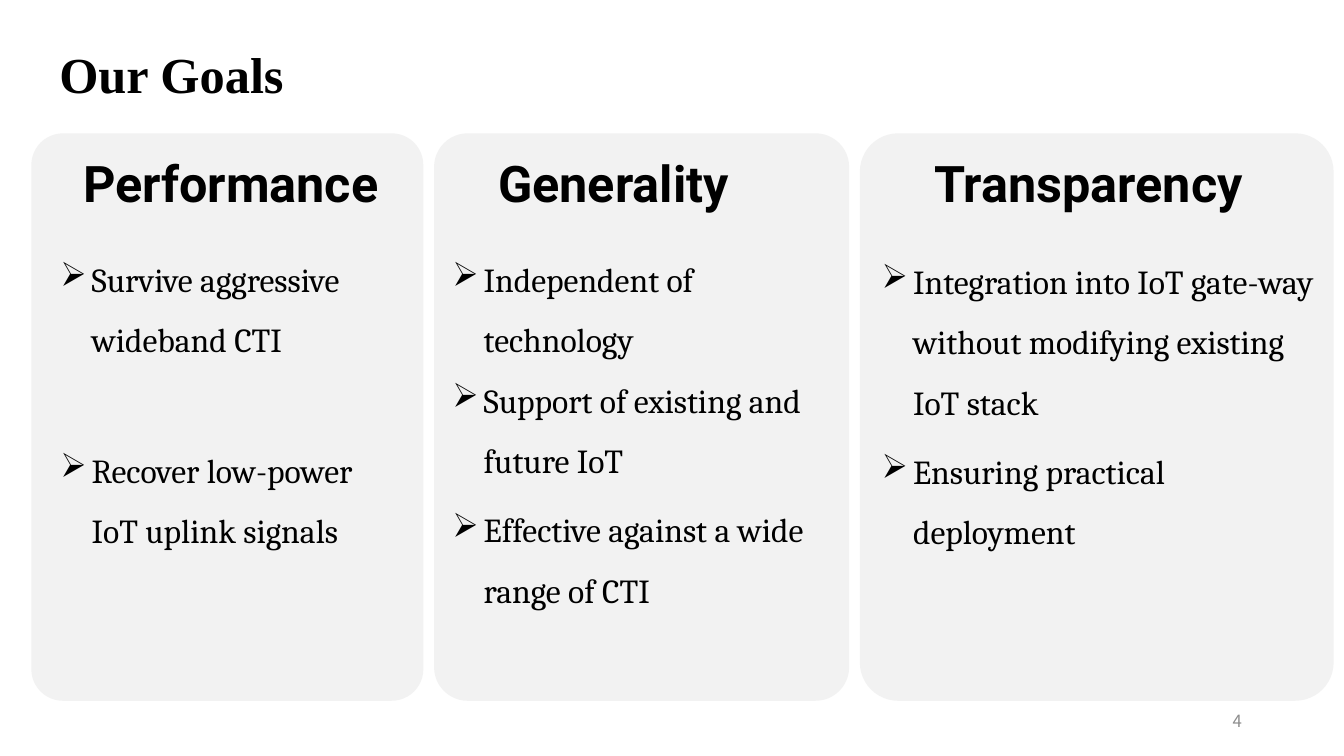
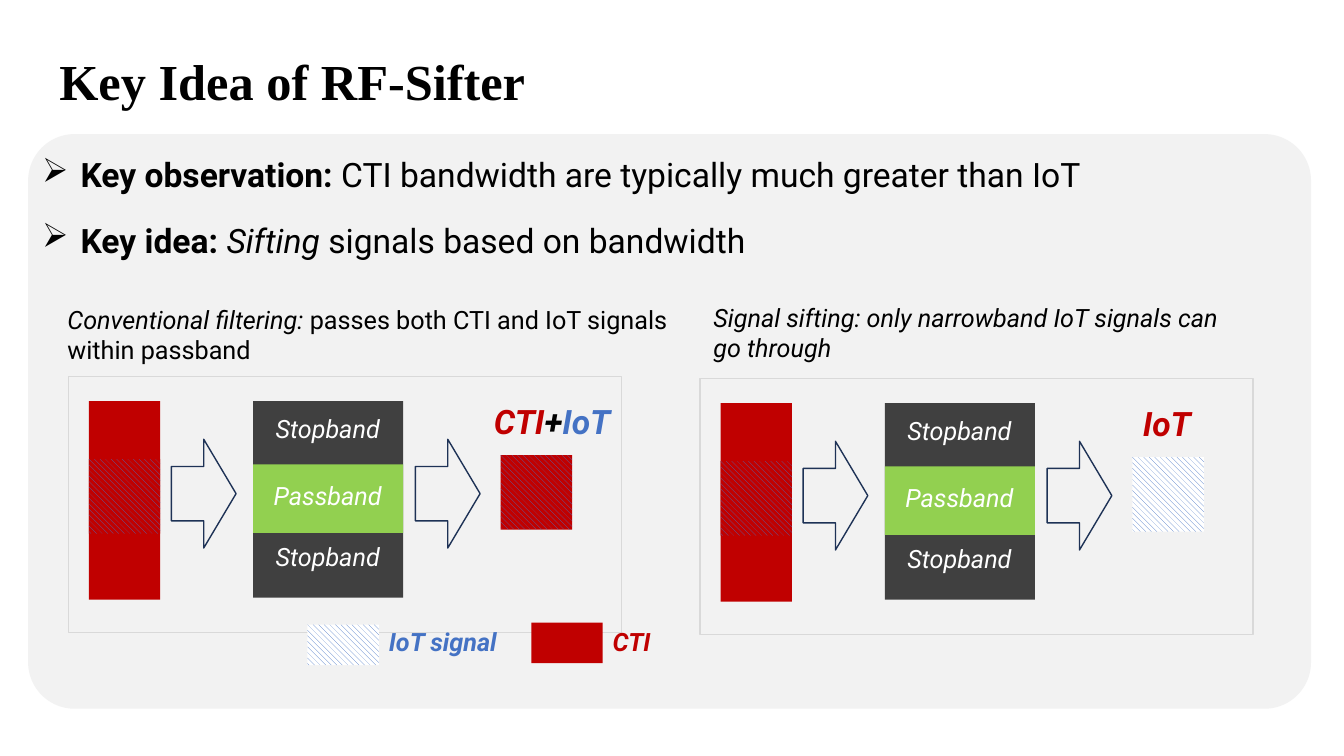
from dataclasses import dataclass
from typing import NamedTuple, Optional

from lxml.etree import SubElement
from pptx import Presentation
from pptx.dml.color import RGBColor
from pptx.enum.dml import MSO_PATTERN
from pptx.enum.shapes import MSO_SHAPE
from pptx.enum.text import MSO_ANCHOR, MSO_AUTO_SIZE, PP_ALIGN
from pptx.oxml.ns import qn
from pptx.shapes.autoshape import Shape
from pptx.slide import Slide
from pptx.text.text import TextFrame
from pptx.util import Cm, Pt

BLACK = RGBColor(0x00, 0x00, 0x00)
WHITE = RGBColor(0xFF, 0xFF, 0xFF)
CARD_GREY = RGBColor(0xF2, 0xF2, 0xF2)
FRAME_GREY = RGBColor(0xD9, 0xD9, 0xD9)
NUMBER_GREY = RGBColor(0x8C, 0x8C, 0x8C)
STOPBAND_GREY = RGBColor(0x40, 0x40, 0x40)
PASSBAND_GREEN = RGBColor(0x92, 0xD0, 0x50)
CTI_RED = RGBColor(0xC0, 0x00, 0x00)
IOT_BLUE = RGBColor(0x44, 0x72, 0xC4)
ARROW_NAVY = RGBColor(0x1E, 0x32, 0x56)

TITLE_FONT = "Times New Roman"
BODY_FONT = "Roboto"
GOAL_FONT = "Cambria"
NUMBER_FONT = "Noto Sans CJK SC"

CARD_LEFT, CARD_TOP, CARD_HEIGHT, CARD_GAP = 0.79, 3.36, 14.3, 0.27


class Box(NamedTuple):
    left: float
    top: float
    width: float
    height: float

    def shifted(self, left: float, top: float) -> "Box":
        return Box(self.left + left, self.top + top, self.width, self.height)

    def lengths(self) -> tuple[Cm, ...]:
        return tuple(Cm(value) for value in self)


class Run(NamedTuple):
    text: str
    bold: Optional[bool] = None
    italic: Optional[bool] = None
    color: Optional[RGBColor] = None


class Item(NamedTuple):
    runs: list[Run]
    space_before: float = 0


@dataclass(frozen=True)
class GoalCard:
    heading: str
    width: float
    heading_box: Box
    body_box: Box
    goals: list[Item]


@dataclass(frozen=True)
class Diagram:
    left: float
    top: float
    caption_box: Box
    caption: list[Run]
    output_label: list[Run]
    output_label_left: float
    output_background: RGBColor


def item(text: str, space_before: float = 0) -> Item:
    return Item([Run(text)], space_before)


def write_text(
    frame: TextFrame,
    items: list[Item],
    *,
    size: float,
    font: str = BODY_FONT,
    color: RGBColor = BLACK,
    bold: bool = False,
    italic: bool = False,
    align: PP_ALIGN = PP_ALIGN.LEFT,
    anchor: MSO_ANCHOR = MSO_ANCHOR.TOP,
    line_spacing: Optional[float] = None,
    bullet_indent: float = 0,
) -> None:
    frame.word_wrap = True
    frame.auto_size = MSO_AUTO_SIZE.SHAPE_TO_FIT_TEXT
    frame.vertical_anchor = anchor
    for index, entry in enumerate(items):
        paragraph = frame.add_paragraph() if index else frame.paragraphs[0]
        if bullet_indent:
            properties = paragraph._p.get_or_add_pPr()
            properties.set("marL", str(Cm(bullet_indent)))
            properties.set("indent", str(-Cm(bullet_indent)))
            SubElement(properties, qn("a:buChar")).set("char", "➢")
        paragraph.alignment = align
        paragraph.space_before = Pt(entry.space_before)
        if line_spacing:
            paragraph.line_spacing = line_spacing
        for part in entry.runs:
            run = paragraph.add_run()
            run.text = part.text
            run.font.name = font
            run.font.size = Pt(size)
            run.font.bold = bold if part.bold is None else part.bold
            run.font.italic = italic if part.italic is None else part.italic
            run.font.color.rgb = part.color or color


def add_text(slide: Slide, box: Box, items: list[Item], **text_format) -> None:
    write_text(slide.shapes.add_textbox(*box.lengths()).text_frame, items, **text_format)


def add_block(
    slide: Slide,
    box: Box,
    *,
    fill: Optional[RGBColor] = None,
    line: Optional[RGBColor] = None,
    kind: MSO_SHAPE = MSO_SHAPE.RECTANGLE,
) -> Shape:
    shape = slide.shapes.add_shape(kind, *box.lengths())
    shape.shadow.inherit = False
    if fill is None:
        shape.fill.background()
    else:
        shape.fill.solid()
        shape.fill.fore_color.rgb = fill
    if line is None:
        shape.line.fill.background()
    else:
        shape.line.color.rgb = line
        shape.line.width = Pt(1)
    return shape


def add_hatched(slide: Slide, box: Box, background: RGBColor) -> None:
    shape = add_block(slide, box)
    shape.fill.patterned()
    shape.fill.pattern = MSO_PATTERN.WIDE_DOWNWARD_DIAGONAL
    shape.fill.fore_color.rgb = IOT_BLUE
    shape.fill.back_color.rgb = background


def add_card(slide: Slide, box: Box) -> None:
    card = add_block(slide, box, fill=CARD_GREY, kind=MSO_SHAPE.ROUNDED_RECTANGLE)
    card.adjustments[0] = 0.081


def add_titled_slide(presentation: Presentation, text: str, top: float) -> Slide:
    slide = presentation.slides.add_slide(presentation.slide_layouts[5])
    title = slide.shapes.title
    title.left, title.top, title.width, title.height = Box(1.24, top, 29.31, 1.93).lengths()
    write_text(title.text_frame, [item(text)], size=36, font=TITLE_FONT, bold=True, line_spacing=1.2)
    return slide


def add_diagram(slide: Slide, diagram: Diagram) -> None:
    def place(left: float, top: float, width: float, height: float) -> Box:
        return Box(left, top, width, height).shifted(diagram.left, diagram.top)

    add_block(slide, place(0, 0, 1.8, 5), fill=CTI_RED)
    add_hatched(slide, place(0, 1.46, 1.8, 1.88), CTI_RED)
    add_hatched(slide, place(10.38, 1.36, 1.8, 1.88), diagram.output_background)
    add_block(slide, place(4.14, 0, 3.78, 4.95), fill=STOPBAND_GREY)
    add_block(slide, place(4.14, 1.59, 3.78, 1.73), fill=PASSBAND_GREEN)
    for band, top in (("Stopband", 0.17), ("Passband", 1.88), ("Stopband", 3.4)):
        add_text(slide, place(4.24, top, 3.56, 1.27), [item(band)],
                 size=18, color=WHITE, italic=True, align=PP_ALIGN.CENTER)
    for left in (2.08, 8.23):
        add_block(slide, place(left, 0.96, 1.63, 2.74), line=ARROW_NAVY, kind=MSO_SHAPE.RIGHT_ARROW)
    add_block(slide, place(-0.52, -0.62, 13.94, 6.45), line=FRAME_GREY)
    add_text(slide, diagram.caption_box, [Item(diagram.caption)], size=18, italic=True)
    add_text(slide, place(diagram.output_label_left, -0.12, 4.72, 1.27),
             [Item(diagram.output_label)], size=24, bold=True, italic=True)


GOAL_CARDS = [
    GoalCard(
        "Performance", 9.88, Box(1.5, 3.7, 8.64, 1.8), Box(1.27, 5.89, 8.64, 7.98),
        [item("Survive aggressive wideband CTI"),
         item("Recover low-power IoT uplink signals", 50)],
    ),
    GoalCard(
        "Generality", 10.46, Box(11.58, 3.7, 7.77, 1.8), Box(11.15, 5.89, 10.52, 11.05),
        [item("Independent of technology"),
         item("Support of existing and future IoT"),
         item("Effective against a wide range of CTI", 6)],
    ),
    GoalCard(
        "Transparency", 11.94, Box(22.91, 3.7, 9.04, 1.8), Box(21.97, 5.94, 11.56, 7.98),
        [item("Integration into IoT gate-way without modifying existing IoT stack"),
         item("Ensuring practical deployment", 6)],
    ),
]

DIAGRAMS = [
    Diagram(
        2.24, 10.11, Box(1.45, 7.54, 16.94, 1.8),
        [Run("Conventional filtering: "),
         Run("passes both CTI and IoT signals within passband", italic=False)],
        [Run("CTI", color=CTI_RED), Run("+"), Run("IoT", color=IOT_BLUE)], 9.96, CTI_RED,
    ),
    Diagram(
        18.16, 10.16, Box(17.73, 7.49, 13.94, 1.8),
        [Run("Signal sifting: only narrowband IoT signals can go through")],
        [Run("IoT", color=CTI_RED)], 10.39, WHITE,
    ),
]


def build_goals(presentation: Presentation) -> None:
    slide = add_titled_slide(presentation, "Our Goals", 0.66)
    left = CARD_LEFT
    for card in GOAL_CARDS:
        add_card(slide, Box(left, CARD_TOP, card.width, CARD_HEIGHT))
        add_text(slide, card.heading_box, [item(card.heading)],
                 size=36, bold=True, align=PP_ALIGN.CENTER)
        add_text(slide, card.body_box, card.goals,
                 size=24, font=GOAL_FONT, line_spacing=1.5, bullet_indent=0.79)
        left += card.width + CARD_GAP
    add_text(slide, Box(23.93, 17.65, 7.62, 1.02), [item("4")], size=12, font=NUMBER_FONT,
             color=NUMBER_GREY, align=PP_ALIGN.RIGHT, anchor=MSO_ANCHOR.MIDDLE)


def build_key_idea(presentation: Presentation) -> None:
    slide = add_titled_slide(presentation, "Key Idea of RF-Sifter", 0.84)
    add_card(slide, Box(0.71, 3.38, 32.33, 14.48))
    observations = [
        Item([Run("Key observation: ", bold=True),
              Run("CTI bandwidth are typically much greater than IoT")]),
        Item([Run("Key idea: ", bold=True), Run("Sifting", italic=True),
              Run(" signals based on bandwidth")], 18),
    ]
    add_text(slide, Box(0.81, 3.76, 32.23, 2.95), observations, size=24, bullet_indent=0.97)
    for diagram in DIAGRAMS:
        add_diagram(slide, diagram)
    add_hatched(slide, Box(7.75, 15.74, 1.8, 1.02), WHITE)
    add_block(slide, Box(13.39, 15.69, 1.8, 1.02), fill=CTI_RED)
    for text, box, color in (
        ("IoT signal", Box(9.55, 15.67, 4.01, 1.02), IOT_BLUE),
        ("CTI", Box(15.19, 15.65, 2.21, 1.07), CTI_RED),
    ):
        add_text(slide, box, [item(text)], size=18, color=color, bold=True, italic=True)


def main() -> None:
    presentation = Presentation()
    presentation.slide_width, presentation.slide_height = Cm(33.87), Cm(19.05)
    build_goals(presentation)
    build_key_idea(presentation)
    presentation.save("out.pptx")


if __name__ == "__main__":
    main()
